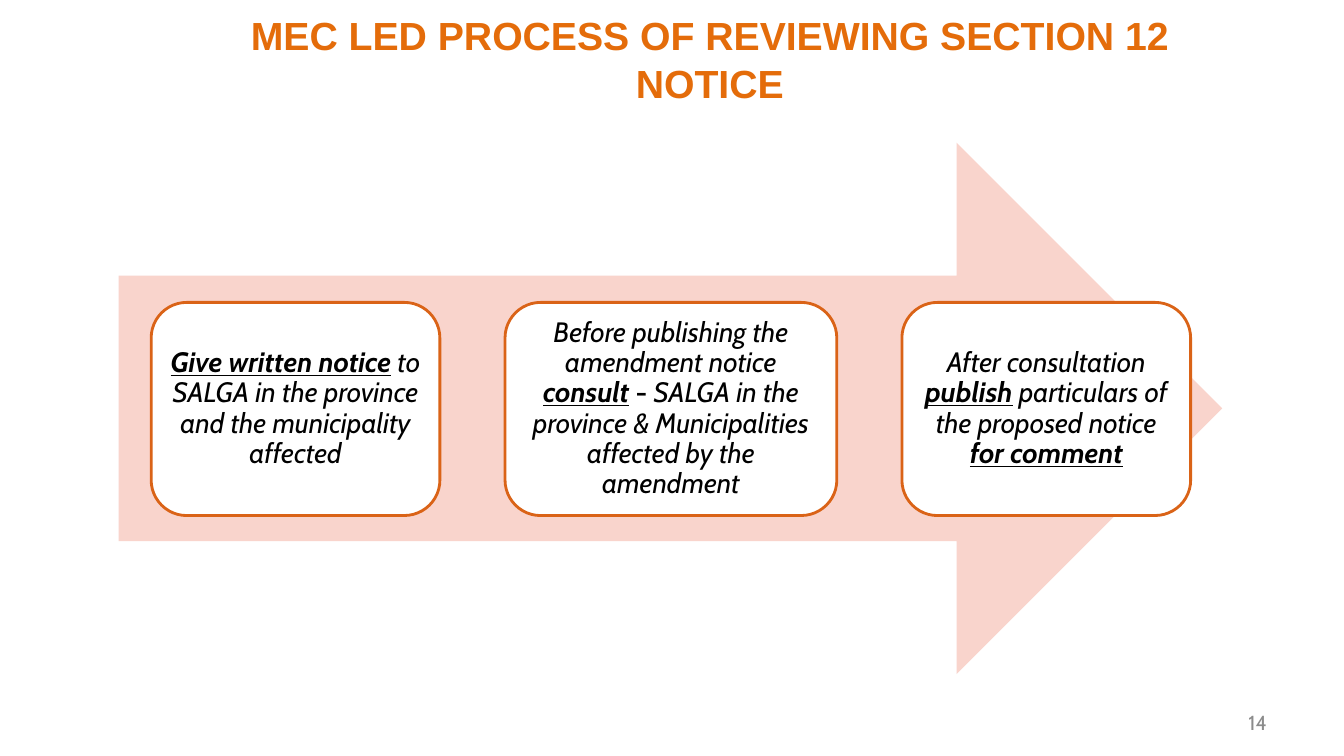
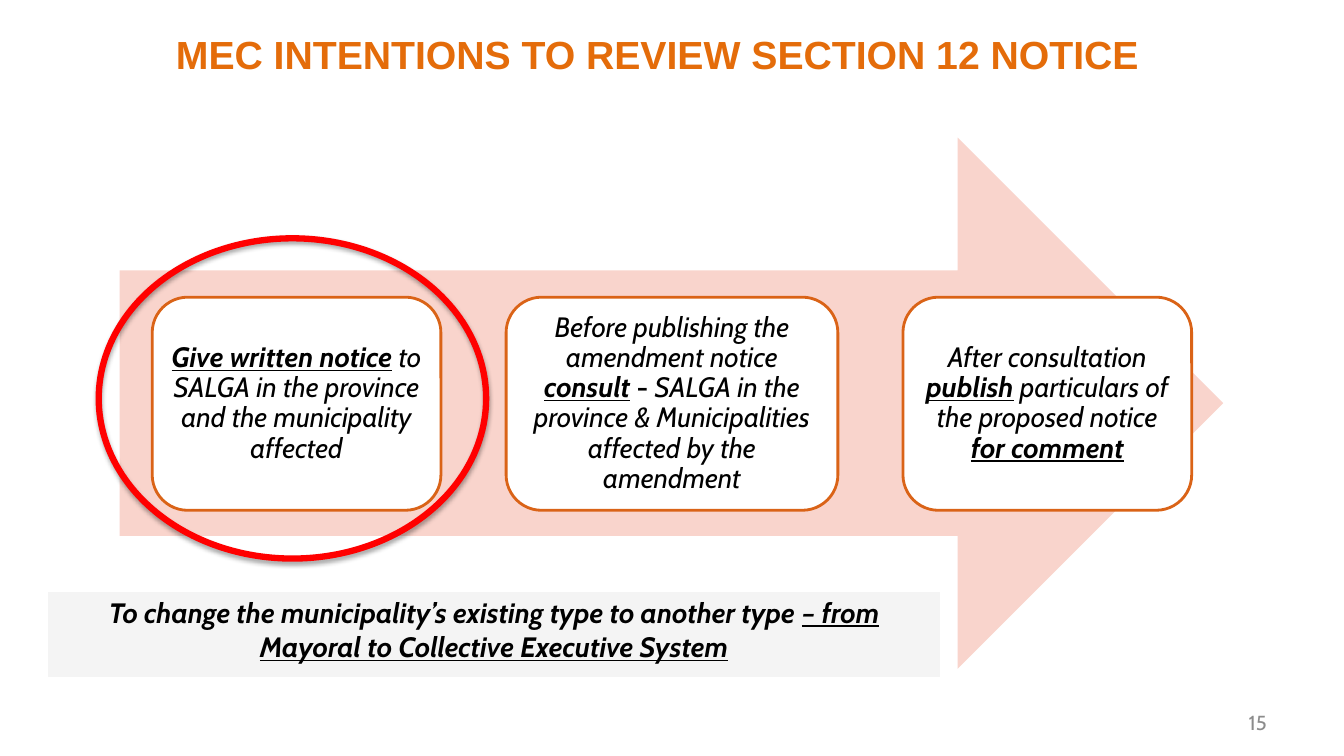
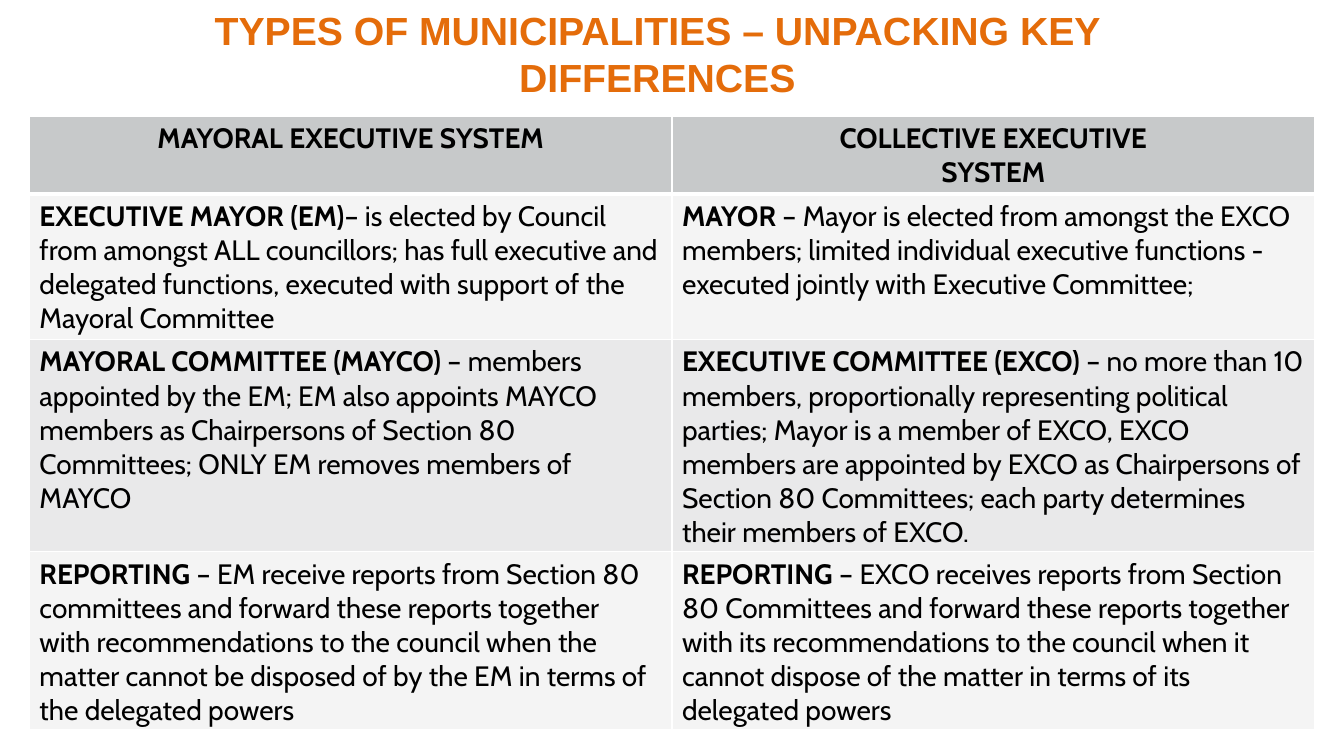
import pptx
import pptx.util
import pptx.dml.color
import pptx.enum.shapes
import pptx.enum.text
import pptx.oxml.ns
from lxml import etree

RGB = pptx.dml.color.RGBColor
KIND = pptx.enum.shapes.MSO_SHAPE
ALIGN = pptx.enum.text.PP_ALIGN
ANCHOR = pptx.enum.text.MSO_ANCHOR
qn = pptx.oxml.ns.qn

# Shared colours and fonts
ORANGE = RGB(0xE4, 0x6C, 0x0A)
RUST = RGB(0xDA, 0x63, 0x17)
PINK = RGB(0xF9, 0xD4, 0xCC)
RED = RGB(0xFF, 0x00, 0x00)
BLACK = RGB(0x00, 0x00, 0x00)
WHITE = RGB(0xFF, 0xFF, 0xFF)
GREY = RGB(0x8C, 0x8C, 0x8C)
HEAD = RGB(0xC7, 0xC9, 0xCA)
PALE = RGB(0xF4, 0xF4, 0xF4)
MID = RGB(0xE9, 0xE9, 0xEA)
SANS = "Cabin"
BOLD = "Arial"

WIDE, HIGH = 1280, 720

# Cards on the arrow: width and one paragraph of (text, style) runs
STEPS = [
    (275, [("Give written notice", "biu"),
           (" to SALGA in the province and the municipality affected", "i")]),
    (316, [("Before publishing the amendment notice ", "i"),
           ("consult", "biu"), (" - ", "b"),
           ("SALGA in the province & Municipalities affected by the "
            "amendment", "i")]),
    (275, [("After consultation ", "i"), ("publish", "biu"),
           (" particulars of the proposed notice ", "i"),
           ("for comment", "biu")]),
]

CHANGE = [("To change the municipality’s existing type to another type ", "bi"),
          ("– from Mayoral to Collective Executive System", "biu")]

# Table rows: height, fill, cells; each cell is a list of paragraphs
TYPES = [
    (72, HEAD, [
        [[("MAYORAL EXECUTIVE SYSTEM", "b")]],
        [[("COLLECTIVE EXECUTIVE", "b")], [("SYSTEM", "b")]]]),
    (139, PALE, [
        [[("EXECUTIVE MAYOR (EM)", "b"),
          ("– is elected by Council from amongst ALL councillors; has full "
           "executive and delegated functions, executed with support of the "
           "Mayoral Committee", "")]],
        [[("MAYOR", "b"),
          (" – Mayor is elected from amongst the EXCO members; limited "
           "individual executive functions - executed jointly with "
           "Executive Committee;", "")]]]),
    (202, MID, [
        [[("MAYORAL COMMITTEE (MAYCO) ", "b"),
          ("– members appointed by the EM; EM also appoints MAYCO members as "
           "Chairpersons of Section 80 Committees; ONLY EM removes members "
           "of MAYCO", "")]],
        [[("EXECUTIVE COMMITTEE (EXCO) ", "b"),
          ("– no more than 10 members, proportionally representing political "
           "parties; Mayor is a member of EXCO, EXCO members are appointed "
           "by EXCO as Chairpersons of Section 80 Committees; each party "
           "determines their members of EXCO.", "")]]]),
    (169, PALE, [
        [[("REPORTING", "b"),
          (" – EM receive reports from Section 80 committees and forward "
           "these reports together", "")],
         [("with recommendations to the council when the matter cannot be "
           "disposed of by the EM in terms of the delegated powers", "")]],
        [[("REPORTING", "b"),
          (" – EXCO receives reports from Section 80 Committees and forward "
           "these reports together with its recommendations to the council "
           "when it cannot dispose of the matter in terms of its delegated "
           "powers", "")]]]),
]


def px(n):
    return pptx.util.Emu(n * 9525)


def box(*sides):
    return [px(n) for n in sides]


def say(frame, paras, size=20, font=SANS, color=BLACK, align=ALIGN.CENTER,
        anchor=ANCHOR.TOP, space=None):
    """Fill a frame; style letters are b(old), i(talic), u(nderline)."""
    frame.word_wrap = True
    frame.vertical_anchor = anchor
    for n, runs in enumerate(paras):
        para = frame.add_paragraph() if n else frame.paragraphs[0]
        para.alignment = align
        if space:
            para.line_spacing = space
        for text, style in runs:
            run = para.add_run()
            run.text = text
            run.font.name = font
            run.font.size = pptx.util.Pt(size)
            run.font.color.rgb = color
            run.font.bold = "b" in style
            run.font.italic = "i" in style
            run.font.underline = "u" in style


def shape(slide, kind, area, fill=None, line=None, width=2):
    item = slide.shapes.add_shape(kind, *box(*area))
    item.shadow.inherit = False
    if fill is None:
        item.fill.background()
    else:
        item.fill.solid()
        item.fill.fore_color.rgb = fill
    if line is None:
        item.line.fill.background()
    else:
        item.line.color.rgb = line
        item.line.width = pptx.util.Pt(width)
    return item


def start(deck, title, page, left=126, top=1):
    """Add a slide with its title and page number."""
    slide = deck.slides.add_slide(deck.slide_layouts[5])
    head = slide.shapes.title
    head.left, head.top, head.width, head.height = box(left, top, 1000, 100)
    head.text_frame.auto_size = pptx.enum.text.MSO_AUTO_SIZE.NONE
    say(head.text_frame, [[(title, "b")]], size=28, font=BOLD, color=ORANGE,
        anchor=ANCHOR.MIDDLE)
    foot = slide.shapes.add_textbox(*box(1148, 672, 68, 38))
    say(foot.text_frame, [[(str(page), "")]], size=14.5, color=GREY,
        align=ALIGN.RIGHT)
    return slide


def flow(slide, left, top):
    """Draw the wide arrow with its row of cards."""
    shape(slide, KIND.RIGHT_ARROW, (left, top, 1051, 506), fill=PINK)
    x = left + 31
    for wide, runs in STEPS:
        card = shape(slide, KIND.ROUNDED_RECTANGLE, (x, top + 152, wide, 203),
                     fill=WHITE, line=RUST)
        frame = card.text_frame
        frame.margin_left = frame.margin_right = px(8)
        frame.margin_top = frame.margin_bottom = 0
        say(frame, [runs], anchor=ANCHOR.MIDDLE, space=0.9)
        x += wide + 62


def ring(slide, area):
    """Draw a red ring with a soft shadow below it."""
    item = shape(slide, KIND.OVAL, area, line=RED, width=4.5)
    glow = etree.SubElement(item.element.spPr.find(qn("a:effectLst")),
                            qn("a:outerShdw"), blurRad="40000", dist="23000",
                            dir="5400000", rotWithShape="0")
    tone = etree.SubElement(glow, qn("a:srgbClr"), val=str(BLACK))
    etree.SubElement(tone, qn("a:alpha"), val="35000")


def edge(cell, base):
    """Give a cell white borders; base is the bottom width in points."""
    for side, width in (("L", 1), ("R", 1), ("T", 1), ("B", base)):
        line = etree.SubElement(cell._tc.get_or_add_tcPr(), qn("a:ln" + side),
                                w=str(pptx.util.Pt(width)))
        fill = etree.SubElement(line, qn("a:solidFill"))
        etree.SubElement(fill, qn("a:srgbClr"), val=str(WHITE))


def grid(slide, left, top, wide, rows):
    """Add a table with equal columns; its first row is centred."""
    cols = len(rows[0][2])
    high = sum(row[0] for row in rows)
    table = slide.shapes.add_table(
        len(rows), cols, *box(left, top, wide * cols, high)).table
    table.first_row = table.horz_banding = False
    for r, (tall, fill, cells) in enumerate(rows):
        table.rows[r].height = px(tall)
        for c, paras in enumerate(cells):
            cell = table.cell(r, c)
            edge(cell, 1 if r else 3)
            cell.fill.solid()
            cell.fill.fore_color.rgb = fill
            say(cell.text_frame, paras,
                align=ALIGN.LEFT if r else ALIGN.CENTER)


def main():
    deck = pptx.Presentation()
    deck.slide_width, deck.slide_height = box(WIDE, HIGH)

    # Review process
    slide = start(deck, "MEC LED PROCESS OF REVIEWING SECTION 12 NOTICE", 14,
                  left=176, top=6)
    flow(slide, 113, 136)

    # Intentions, first step ringed
    slide = start(deck, "MEC INTENTIONS TO REVIEW SECTION 12 NOTICE", 15)
    flow(slide, 114, 131)
    ring(slide, (94, 227, 369, 305))
    grid(slide, 45, 563, 851, [(84, PALE, [[CHANGE]])])

    # Comparison of types
    slide = start(deck, "TYPES OF MUNICIPALITIES – UNPACKING KEY DIFFERENCES",
                  16)
    grid(slide, 28, 111, 612, TYPES)

    deck.save("out.pptx")


if __name__ == "__main__":
    main()
